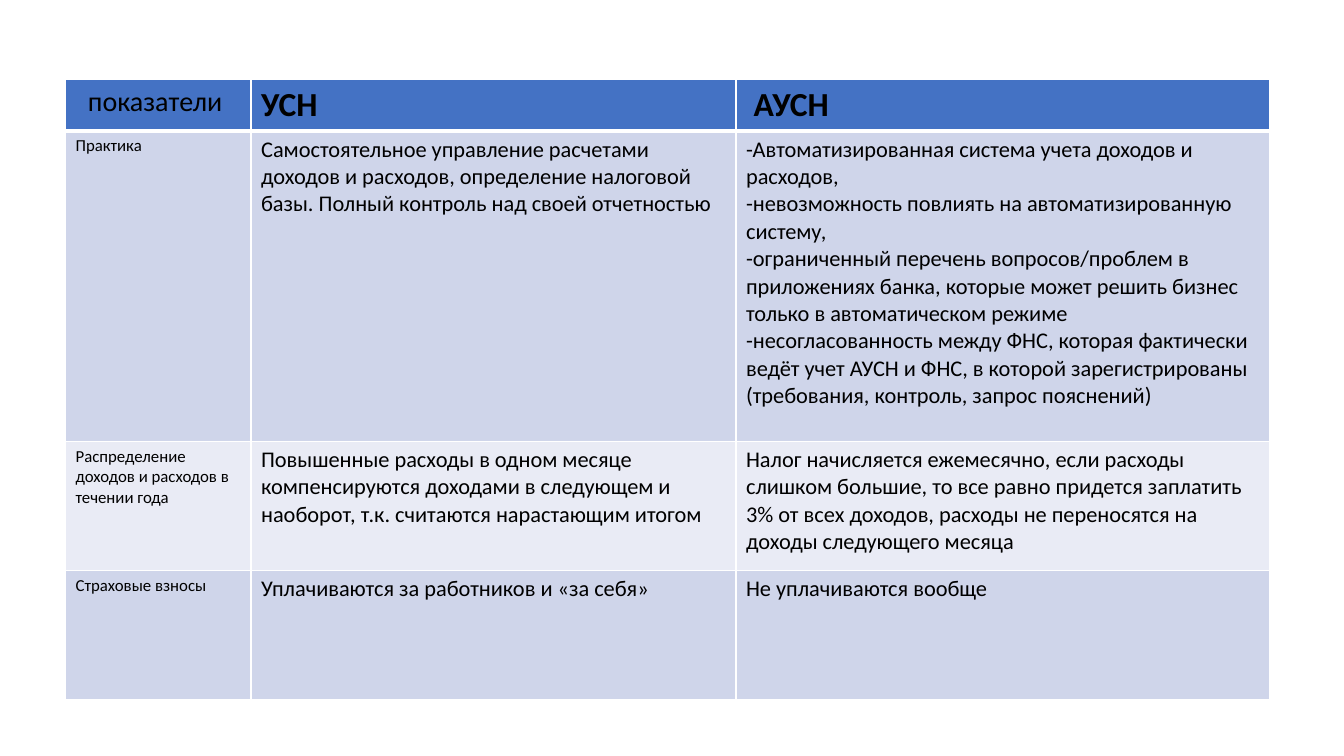
from lxml.etree import SubElement
from pptx import Presentation
from pptx.dml.color import RGBColor
from pptx.enum.text import PP_ALIGN
from pptx.oxml.ns import qn
from pptx.util import Inches, Pt

HEADINGS = ["показатели ", "УСН", " АУСН"]
COMPARISON = [
    ("Практика",
     "Самостоятельное управление расчетами доходов и расходов, определение налоговой базы. "
     "Полный контроль над своей отчетностью",
     "-Автоматизированная система учета доходов и расходов,\n"
     "-невозможность повлиять на автоматизированную систему,\n"
     "-ограниченный перечень вопросов/проблем в приложениях банка, которые может решить бизнес "
     "только в автоматическом режиме\n"
     "-несогласованность между ФНС, которая фактически ведёт учет АУСН и ФНС, в которой "
     "зарегистрированы (требования, контроль, запрос пояснений)"),
    ("Распределение доходов и расходов в течении года",
     "Повышенные расходы в одном месяце компенсируются доходами в следующем и наоборот, "
     "т.к. считаются нарастающим итогом",
     "Налог начисляется ежемесячно, если расходы слишком большие, то все равно придется "
     "заплатить 3% от всех доходов, расходы не переносятся на доходы следующего месяца"),
    ("Страховые взносы",
     "Уплачиваются за работников и «за себя»",
     "Не уплачиваются вообще"),
]
COLUMN_WIDTHS = [1.84, 4.81, 5.29]
ROW_HEIGHTS = [0.5, 3.08, 1.28, 1.28]
HEADING_SIZES = [20, 24, 24]
BODY_SIZES = [12, 16, 16]
HEADING_FILL, BAND_FILLS = "4472C4", ["E9EBF5", "CFD5EA"]
TEXT_COLOR, BORDER_COLOR = "000000", "FFFFFF"


def color(code):
    """Turn a hex string into a colour."""
    return RGBColor.from_string(code)


def set_borders(cell, top, bottom):
    """Draw the four cell borders, with top and bottom widths in points."""
    properties = cell._tc.get_or_add_tcPr()
    widths = {"a:lnL": 1, "a:lnR": 1, "a:lnT": top, "a:lnB": bottom}
    for position, (side, width) in enumerate(widths.items()):
        border = SubElement(properties, qn(side), w=str(Pt(width)))
        properties.insert(position, border)
        border_fill = SubElement(border, qn("a:solidFill"))
        SubElement(border_fill, qn("a:srgbClr"), val=BORDER_COLOR)


def write_cell(cell, text, size, bold, fill):
    """Fill one cell and format its text."""
    cell.fill.solid()
    cell.fill.fore_color.rgb = color(fill)
    cell.text_frame.text = text
    for paragraph in cell.text_frame.paragraphs:
        for run in paragraph.runs:
            run.font.name = "Calibri"
            run.font.size = Pt(size)
            run.font.bold = bold
            run.font.color.rgb = color(TEXT_COLOR)


def main():
    """Build the comparison slide."""
    deck = Presentation()
    deck.slide_width, deck.slide_height = Inches(13.33), Inches(7.5)
    slide = deck.slides.add_slide(deck.slide_layouts[6])
    rows = [HEADINGS, *COMPARISON]
    comparison = slide.shapes.add_table(
        len(rows), len(HEADINGS), Inches(0.65), Inches(0.79),
        Inches(sum(COLUMN_WIDTHS)), Inches(sum(ROW_HEIGHTS))).table
    for column, width in zip(comparison.columns, COLUMN_WIDTHS):
        column.width = Inches(width)
    for row, height in zip(comparison.rows, ROW_HEIGHTS):
        row.height = Inches(height)

    for r, texts in enumerate(rows):
        heading = r == 0
        sizes = HEADING_SIZES if heading else BODY_SIZES
        fill = HEADING_FILL if heading else BAND_FILLS[r % 2]
        for c, text in enumerate(texts):
            cell = comparison.cell(r, c)
            write_cell(cell, text, sizes[c], heading and c > 0, fill)
            set_borders(cell, top=3 if r == 1 else 1, bottom=3 if heading else 1)
    comparison.cell(0, 0).text_frame.paragraphs[0].alignment = PP_ALIGN.CENTER
    deck.save("out.pptx")


if __name__ == "__main__":
    main()
